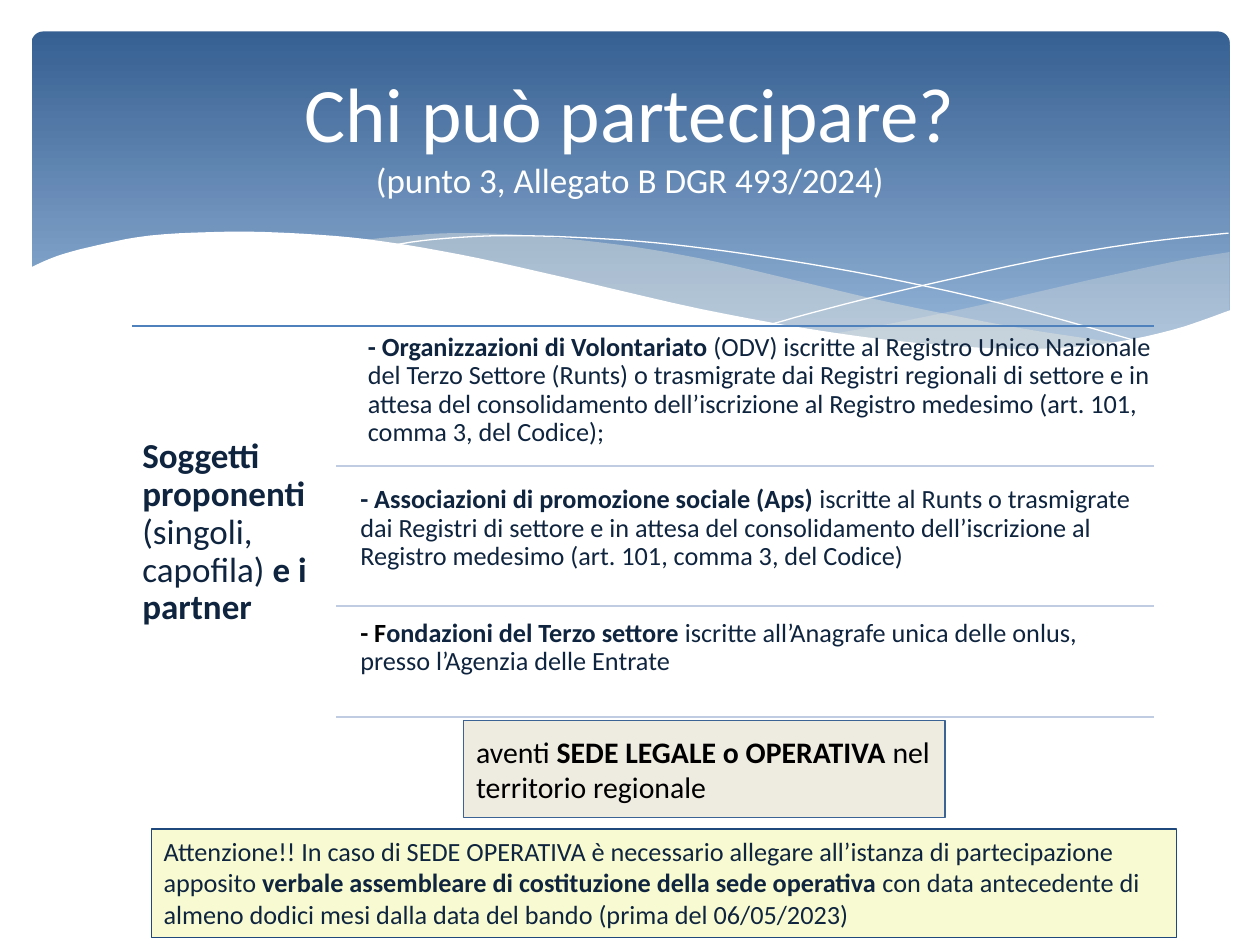
from dataclasses import dataclass

from lxml.etree import SubElement as Sub
from pptx import Presentation as Deck
from pptx.dml.color import RGBColor as Rgb
from pptx.enum.shapes import MSO_CONNECTOR as Link, MSO_SHAPE as Form
from pptx.enum.text import MSO_ANCHOR as Anchor, PP_ALIGN as Align
from pptx.oxml.ns import qn
from pptx.util import Inches, Pt


@dataclass(frozen=True)
class Theme:
    font: str = "Calibri"
    white: str = "FFFFFF"
    black: str = "000000"
    ink: str = "0F243E"
    deep: str = "366092"
    sky: str = "93B3D7"
    sand: str = "EEECE1"
    lemon: str = "F8FBD1"
    rule: str = "4F81BD"
    pale: str = "C0CCE1"
    edge: str = "3B6495"
    navy: str = "1F497D"
    head: int = 44
    lead: int = 20
    mid: int = 17
    body: int = 15


@dataclass(frozen=True)
class Grid:
    left: float = 1.05
    split: float = 2.67
    right: float = 9.16
    rows: tuple = (2.59, 3.7, 4.81, 5.69)


T = Theme()
G = Grid()

VEIL_R = [
    [(9.76, 2), (9.35, 2.07), (8.61, 2.23), (7.79, 2.42), (7.06, 2.57), (6.61, 2.65)],
    [(6.61, 2.65), (7.19, 2.72), (7.81, 2.77), (8.35, 2.77), (8.89, 2.72),
     (9.35, 2.62), (9.76, 2.47)],
]
VEIL_L = [
    [(8.93, 2.73), (8.07, 2.6), (7.06, 2.4), (6.29, 2.22), (5.55, 2.05), (4.89, 1.94),
     (4.2, 1.87), (3.61, 1.85), (3.13, 1.88), (2.86, 1.91)],
    [(2.86, 1.91), (3.62, 2.03), (4.49, 2.22), (5.3, 2.4), (6.01, 2.55), (6.8, 2.68),
     (7.48, 2.76), (8.07, 2.78), (8.57, 2.77), (8.93, 2.73)],
]
THREADS = [
    [(3.09, 1.95), (3.44, 1.9), (4.01, 1.87), (4.69, 1.89), (5.33, 1.94), (6.08, 2.04),
     (6.95, 2.19), (7.95, 2.41), (9.07, 2.72)],
    [(6.13, 2.57), (6.72, 2.41), (7.48, 2.23), (8.36, 2.04), (9.1, 1.92), (9.75, 1.85)],
]
WAVE = [
    [(9.77, 2.46), (9.3, 2.62), (8.75, 2.73), (8.09, 2.77), (7.26, 2.72), (6.48, 2.62),
     (5.55, 2.45), (4.47, 2.2), (3.65, 2.02), (2.92, 1.9), (2.3, 1.85), (1.77, 1.84),
     (1.19, 1.87), (0.76, 1.95), (0.46, 2.03), (0.23, 2.13)],
    [(0.23, 3.29), (9.77, 3.29)],
]

ITEMS = [
    (2.86, 2.59, 1.06, [
        ("- Organizzazioni di Volontariato ", True, T.ink),
        ("(ODV) iscritte al Registro Unico Nazionale del Terzo Settore (Runts) "
         "o trasmigrate dai Registri regionali di settore e in attesa del "
         "consolidamento dell’iscrizione al Registro medesimo (art. 101, "
         "comma 3, del Codice);", False, T.ink)]),
    (2.8, 3.8, 0.83, [
        ("- Associazioni di promozione sociale (Aps) ", True, T.ink),
        ("iscritte al Runts o trasmigrate dai Registri di settore e in attesa "
         "del consolidamento dell’iscrizione al Registro medesimo (art. 101, "
         "comma 3, del Codice)", False, T.ink)]),
    (2.8, 4.86, 1.06, [
        ("- F", True, T.black),
        ("ondazioni del Terzo settore ", True, T.ink),
        ("iscritte all’Anagrafe unica delle onlus, presso l’Agenzia delle "
         "Entrate", False, T.ink)]),
]
WHO = [("Soggetti proponenti ", True, T.ink), ("(singoli, capofila) ", False, T.ink),
       ("e i partner", True, T.ink)]
SEAT = [("aventi ", False, T.black), ("SEDE LEGALE o OPERATIVA ", True, T.black),
        ("nel territorio regionale", False, T.black)]
NOTE = [
    ("Attenzione!! In caso di SEDE OPERATIVA è necessario allegare all’istanza di "
     "partecipazione apposito ", False, T.ink),
    ("verbale assembleare di costituzione della sede operativa ", True, T.ink),
    ("con data antecedente di almeno dodici mesi dalla data del bando "
     "(prima del 06/05/2023)", False, T.ink),
]


def rgb(tone):
    return Rgb.from_string(tone)


def smooth(pts, steps=5):
    if len(pts) < 3:
        return pts
    ends = [pts[0], *pts, pts[-1]]
    out = [pts[0]]
    for a, b, c, d in zip(ends, ends[1:], ends[2:], ends[3:]):
        for k in range(1, steps + 1):
            t = k / steps
            out.append(tuple(
                (2 * q + (r - p) * t + (2 * p - 5 * q + 4 * r - s) * t ** 2
                 + (3 * q - p - 3 * r + s) * t ** 3) / 2
                for p, q, r, s in zip(a, b, c, d)))
    return out


def curve(slide, parts, fill=None, alpha=100, line=None):
    pts = [(round(x * 1000), round(y * 1000))
           for part in parts for x, y in smooth(part)]
    pen = slide.shapes.build_freeform(*pts[0], scale=914.4)
    pen.add_line_segments(pts[1:], close=fill is not None)
    shape = pen.convert_to_shape()
    shape.shadow.inherit = False
    if fill:
        shape.fill.solid()
        shape.fill.fore_color.rgb = rgb(fill)
        tint = shape.fill._xPr.find(qn("a:solidFill"))[0]
        Sub(tint, qn("a:alpha"), val=str(alpha * 1000))
    else:
        shape.fill.background()
    if line:
        shape.line.color.rgb = rgb(line)
        shape.line.width = Pt(0.75)
    else:
        shape.line.fill.background()


def band(slide):
    shape = slide.shapes.add_shape(
        Form.ROUNDED_RECTANGLE, *map(Inches, (0.25, 0.25, 9.51, 2.7)))
    shape.adjustments[0] = 0.034
    shape.shadow.inherit = False
    shape.line.fill.background()
    shape.fill.gradient()
    shape.fill.gradient_angle = 270
    for stop, tone, pos in zip(shape.fill.gradient_stops, (T.deep, T.sky), (0, 0.9)):
        stop.color.rgb = rgb(tone)
        stop.position = pos


def rule(slide, left, y, tone):
    line = slide.shapes.add_connector(
        Link.STRAIGHT, *map(Inches, (left, y, G.right, y)))
    line.line.color.rgb = rgb(tone)
    line.line.width = Pt(1.25)
    Sub(line._element.spPr, qn("a:effectLst"))


def write(shape, runs, size, pads, space=None):
    frame = shape.text_frame
    frame.word_wrap = True
    frame.vertical_anchor = Anchor.TOP
    (frame.margin_left, frame.margin_top,
     frame.margin_right, frame.margin_bottom) = map(Inches, pads)
    para = frame.paragraphs[0]
    para.alignment = Align.LEFT
    para.line_spacing = space
    para.font.name = T.font
    para.font.size = Pt(size)
    for text, bold, tone in runs:
        run = para.add_run()
        run.text = text
        run.font.bold = bold
        run.font.color.rgb = rgb(tone)


def label(slide, box, runs, size, pads):
    write(slide.shapes.add_textbox(*map(Inches, box)), runs, size, pads, 0.9)


def panel(slide, box, runs, size, pad, fill, edge):
    shape = slide.shapes.add_shape(Form.RECTANGLE, *map(Inches, box))
    shape.shadow.inherit = False
    shape.fill.solid()
    shape.fill.fore_color.rgb = rgb(fill)
    shape.line.color.rgb = rgb(edge)
    shape.line.width = Pt(0.75)
    write(shape, runs, size, (0.1, pad, 0.1, pad))


def title(slide):
    shape = slide.shapes.title
    shape.left, shape.top, shape.width, shape.height = map(Inches, (0.5, 0.37, 9, 1.37))
    shape.text_frame.vertical_anchor = Anchor.MIDDLE
    para = shape.text_frame.paragraphs[0]
    para.alignment = Align.CENTER
    para.font.name = T.font
    para.font.color.rgb = rgb(T.white)
    top = para.add_run()
    top.text = "Chi può partecipare?"
    top.font.size = Pt(T.head)
    para.add_line_break()
    sub = para.add_run()
    sub.text = "(punto 3, Allegato B DGR 493/2024)"
    sub.font.size = Pt(T.lead)
    slide.shapes._spTree.append(shape._element)


def main():
    deck = Deck()
    deck.slide_width, deck.slide_height = Inches(10), Inches(7.5)
    slide = deck.slides.add_slide(deck.slide_layouts[5])
    band(slide)
    curve(slide, VEIL_R, T.sand, 29)
    curve(slide, VEIL_L, T.sand, 40)
    for thread in THREADS:
        curve(slide, [thread], line=T.white)
    curve(slide, WAVE, T.white)
    title(slide)
    rule(slide, G.left, G.rows[0], T.rule)
    label(slide, (G.left, G.rows[0], 1.56, 2.71), WHO, T.lead, (0.08, 0.89, 0.08, 0.08))
    for (x, y, high, runs), low in zip(ITEMS, G.rows[1:]):
        label(slide, (x, y, 6.36, high), runs, T.body, (0.06,) * 4)
        rule(slide, G.split, low, T.pale)
    panel(slide, (3.68, 5.72, 3.82, 0.77), SEAT, T.mid, 0.1, T.sand, T.edge)
    panel(slide, (1.2, 6.58, 8.14, 0.86), NOTE, T.body, 0.05, T.lemon, T.navy)
    deck.save("out.pptx")


if __name__ == "__main__":
    main()
